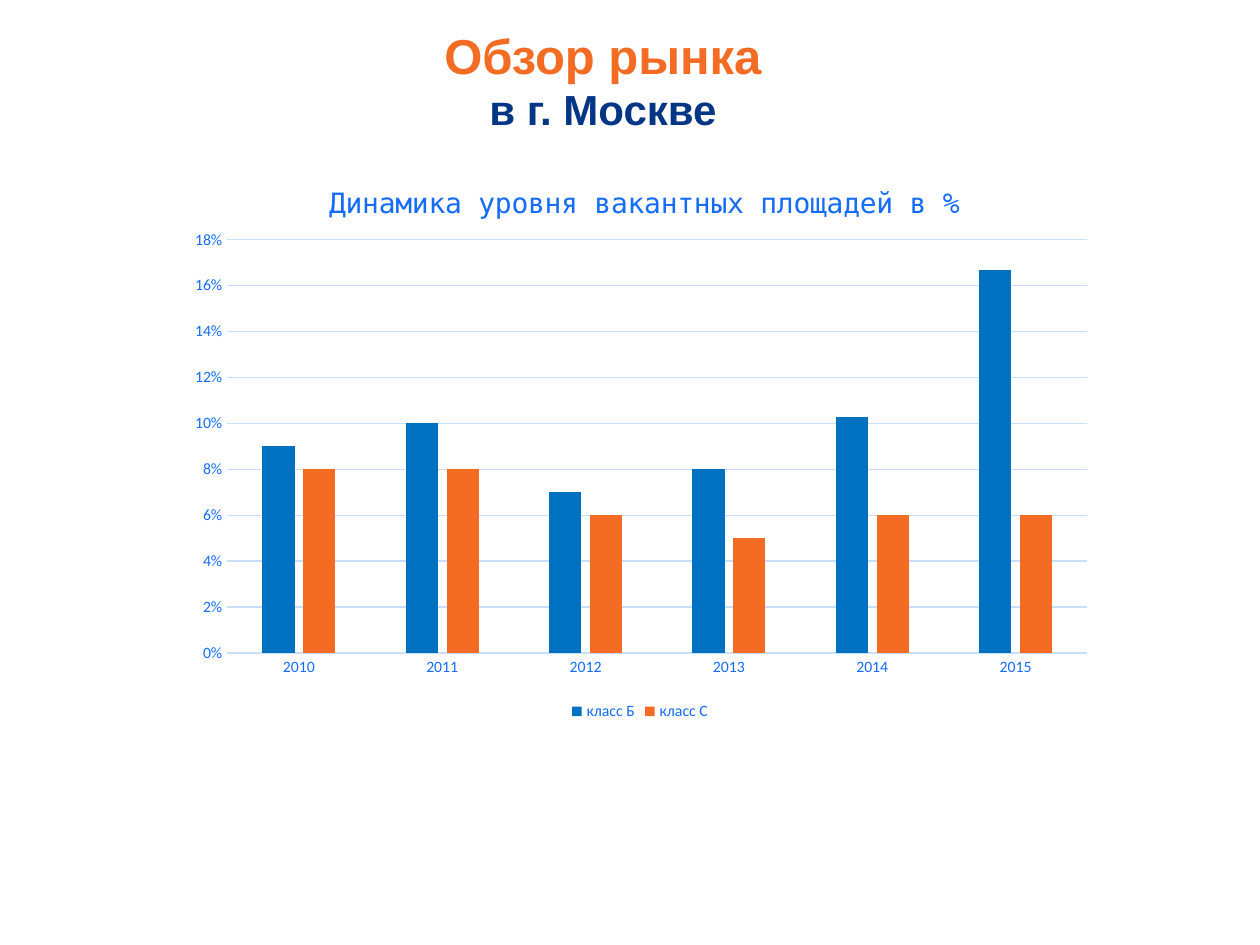
from lxml import etree
from pptx import Presentation
from pptx.chart.data import CategoryChartData
from pptx.dml.color import RGBColor
from pptx.enum.chart import XL_CHART_TYPE as ChartType, XL_LEGEND_POSITION as LegendPos
from pptx.enum.chart import XL_TICK_MARK as Tick
from pptx.enum.text import PP_ALIGN as Align
from pptx.oxml.ns import qn
from pptx.util import Inches, Pt

ORANGE = RGBColor(0xF4, 0x6C, 0x24)
NAVY = RGBColor(0x04, 0x36, 0x85)
BLUE = RGBColor(0x14, 0x6C, 0xF8)
BAR_BLUE = RGBColor(0x00, 0x70, 0xC0)
PALE_BLUE = RGBColor(0xC9, 0xDD, 0xFD)

YEARS = ["2010", "2011", "2012", "2013", "2014", "2015"]
VACANCY = [
    ("класс Б", BAR_BLUE, [0.09, 0.1, 0.07, 0.08, 0.103, 0.167]),
    ("класс С", ORANGE, [0.08, 0.08, 0.06, 0.05, 0.06, 0.06]),
]


def set_font(font, color, **values):
    for name, value in values.items():
        setattr(font, name, value)
    font.color.rgb = color


def set_line(line, color, width=Pt(0.75)):
    line.color.rgb = color
    line.width = width


def place(parent, index, **fractions):
    """Give a chart part a manual layout in fractions of the chart area."""
    for old in parent.findall(qn("c:layout")):
        parent.remove(old)
    layout = etree.Element(qn("c:layout"))
    manual = etree.SubElement(layout, qn("c:manualLayout"))
    settings = {"xMode": "edge", "yMode": "edge", **fractions}
    if "w" in fractions:
        settings = {"layoutTarget": "inner", **settings}
    for name, value in settings.items():
        etree.SubElement(manual, qn(f"c:{name}")).set("val", str(value))
    parent.insert(index, layout)


class SlideBuilder:
    heading_font = "Arial"
    chart_title_font = "DejaVu Sans Mono"
    label_style = {"name": "Calibri", "size": Pt(9), "bold": False}

    def __init__(self, prs):
        self.s = prs.slides.add_slide(prs.slide_layouts[6])

    def heading(self, box, lines):
        tf = self.s.shapes.add_textbox(*map(Inches, box)).text_frame
        tf.word_wrap = True
        for i, (text, size, color) in enumerate(lines):
            p = tf.add_paragraph() if i else tf.paragraphs[0]
            p.alignment = Align.CENTER
            r = p.add_run()
            r.text = text
            set_font(r.font, color, name=self.heading_font, size=Pt(size), bold=True)

    def column_chart(self, box, title, categories, series):
        data = CategoryChartData(number_format="0%")
        data.categories = categories
        for name, _, values in series:
            data.add_series(name, values)
        frame = self.s.shapes.add_chart(
            ChartType.COLUMN_CLUSTERED, *map(Inches, box), data)
        chart = frame.chart
        set_font(chart.font, NAVY, name="Calibri", size=Pt(10))

        plot = chart.plots[0]
        for name, value in {"gap_width": 219, "overlap": -27,
                            "vary_by_categories": False}.items():
            setattr(plot, name, value)
        for bars, (_, color, _) in zip(plot.series, series):
            bars.format.fill.solid()
            bars.format.fill.fore_color.rgb = color
            bars.invert_if_negative = False

        self.chart_title(chart, title)
        self.axes(chart)
        chart.has_legend = True
        chart.legend.position = LegendPos.BOTTOM
        chart.legend.include_in_layout = False
        set_font(chart.legend.font, BLUE, **self.label_style)
        place(chart.element.find(f".//{qn('c:plotArea')}"), 0,
              x=0.056, y=0.145, w=0.925, h=0.727)

    def chart_title(self, chart, text):
        chart.has_title = True
        p = chart.chart_title.text_frame.paragraphs[0]
        r = p.add_run()
        r.text = text
        set_font(r.font, BLUE, name=self.chart_title_font, size=Pt(16), bold=False)
        place(chart.element.find(f".//{qn('c:title')}"), 1, x=0.16, y=0.04)

    def axes(self, chart):
        category, value = chart.category_axis, chart.value_axis
        for axis in (category, value):
            axis.major_tick_mark = axis.minor_tick_mark = Tick.NONE
            set_font(axis.tick_labels.font, BLUE, **self.label_style)
        set_line(category.format.line, PALE_BLUE)
        value.format.line.fill.background()
        value.minimum_scale, value.maximum_scale, value.major_unit = 0, 0.18, 0.02
        value.tick_labels.number_format = "0%"
        value.tick_labels.number_format_is_linked = False
        value.has_major_gridlines = True
        set_line(value.major_gridlines.format.line, PALE_BLUE)


def main():
    prs = Presentation()
    prs.slide_width, prs.slide_height = Inches(10), Inches(7.5)
    slide = SlideBuilder(prs)
    slide.column_chart((1.39, 1.25, 7.38, 4.51),
                       "Динамика уровня вакантных площадей в %", YEARS, VACANCY)
    slide.heading((3.36, 0.15, 2.85, 1),
                  [("Обзор рынка", 28, ORANGE), ("в г. Москве", 24, NAVY)])
    prs.save("out.pptx")


if __name__ == "__main__":
    main()
